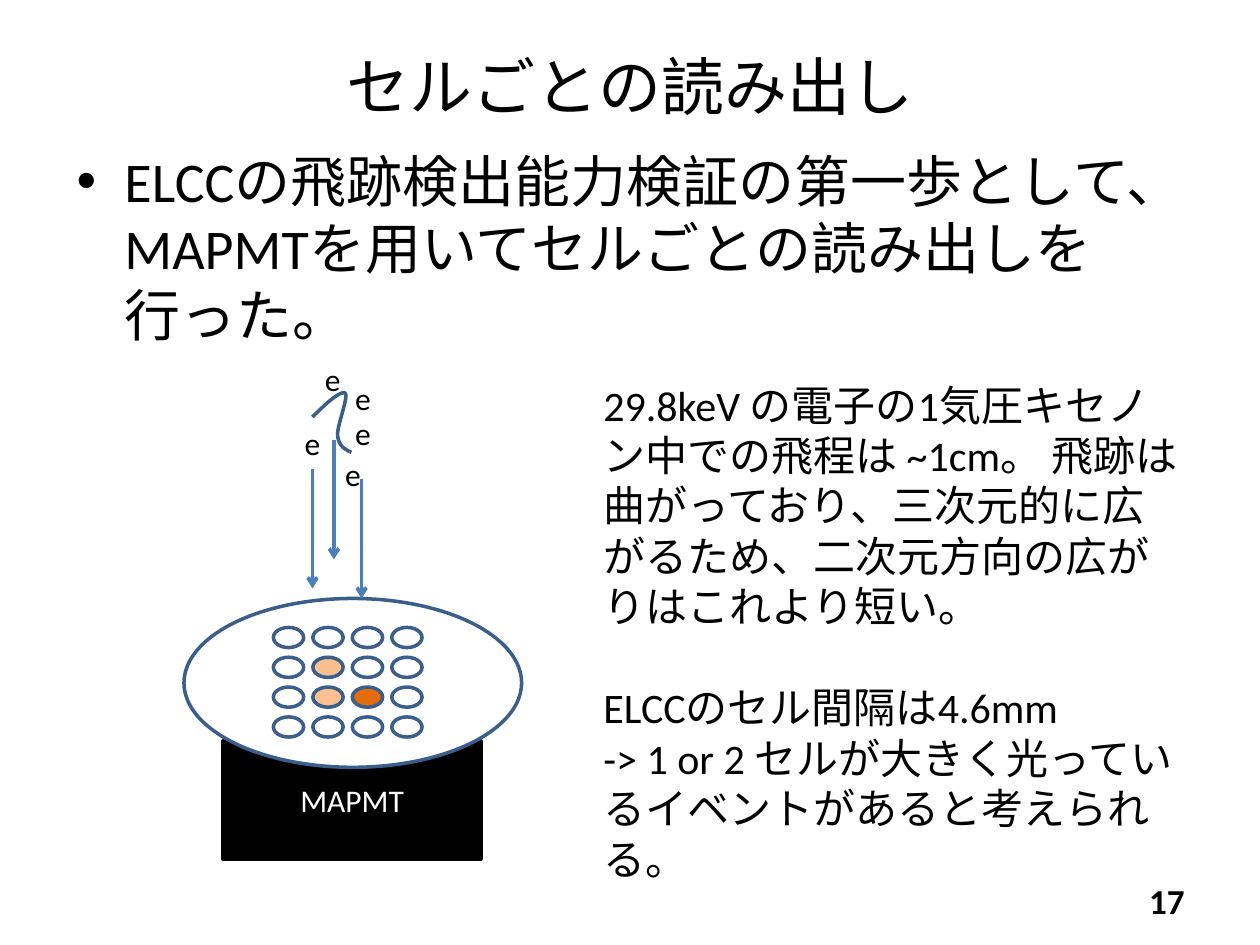
from lxml.etree import SubElement
from pptx import Presentation
from pptx.dml.color import RGBColor
from pptx.enum.shapes import MSO_CONNECTOR, MSO_SHAPE
from pptx.enum.text import MSO_ANCHOR as ANCHOR, PP_ALIGN as ALIGN
from pptx.oxml.ns import qn
from pptx.util import Inches, Pt

FONT = "Calibri"
BLACK, WHITE = "000000", "FFFFFF"
OUTLINE, ARROW = "3A5F8C", "4B7EBC"
PALE, BRIGHT = "FAC090", "E46C0A"

ELECTRONS = [(2.48, 2.81), (2.64, 3.56), (2.32, 3.32), (2.72, 2.96), (2.72, 3.24)]
DRIFTS = [(2.48, 3.72), (2.65, 3.49), (2.87, 3.80)]
DRIFT_LENGTH = 0.95
GRID = 4
CELL_LEFT, CELL_TOP = 2.17, 4.98
COLUMN_STEP, ROW_STEP = 0.94 / 3, 0.71 / 3
LIT_CELLS = {(1, 1): PALE, (2, 1): PALE, (2, 2): BRIGHT}
TRACK_START = (2.48, 3.31)
TRACK_CURVES = [
    [(2.59, 3.20), (2.70, 3.10), (2.74, 3.12)],
    [(2.77, 3.15), (2.67, 3.39), (2.68, 3.46)],
    [(2.69, 3.54), (2.74, 3.57), (2.79, 3.59)],
]
RANGE_NOTES = [
    "29.8keV の電子の1気圧キセノン中での飛程は ~1cm。 飛跡は曲がっており、"
    "三次元的に広がるため、二次元方向の広がりはこれより短い。",
    "ELCCのセル間隔は4.6mm",
    "-> 1 or 2 セルが大きく光っているイベントがあると考えられる。",
]


def rgb(value):
    return RGBColor.from_string(value)


def write(shape, lines, size, color=BLACK, align=ALIGN.LEFT, anchor=ANCHOR.TOP, bold=False):
    frame = shape.text_frame
    frame.word_wrap = True
    frame.vertical_anchor = anchor
    for index, line in enumerate(lines):
        paragraph = frame.add_paragraph() if index else frame.paragraphs[0]
        paragraph.alignment = align
        run = paragraph.add_run()
        run.text = line
        for name, value in {"name": FONT, "size": Pt(size), "bold": bold}.items():
            setattr(run.font, name, value)
        run.font.color.rgb = rgb(color)
    return frame.paragraphs


def add_text(slide, box, lines, size, **style):
    return write(slide.shapes.add_textbox(*map(Inches, box)), lines, size, **style)


def outline(shape, color):
    shape.line.color.rgb = rgb(color)
    shape.line.width = Pt(2)


def add_figure(slide, kind, box, fill=None, line=OUTLINE):
    figure = slide.shapes.add_shape(kind, *map(Inches, box))
    figure.shadow.inherit = False
    if fill:
        figure.fill.solid()
        figure.fill.fore_color.rgb = rgb(fill)
    else:
        figure.fill.background()
    outline(figure, line)
    return figure


def add_arrow_down(slide, x, top):
    arrow = slide.shapes.add_connector(
        MSO_CONNECTOR.STRAIGHT, *map(Inches, (x, top, x, top + DRIFT_LENGTH)))
    outline(arrow, ARROW)
    SubElement(arrow.line._get_or_add_ln(), qn("a:tailEnd"), type="arrow")
    SubElement(arrow._element.spPr, qn("a:effectLst"))


def curve_points(start, controls, steps=16):
    """Points along a cubic Bézier curve, without its start."""
    points = [start, *controls]
    for step in range(1, steps + 1):
        t = step / steps
        weights = ((1 - t) ** 3, 3 * t * (1 - t) ** 2, 3 * t * t * (1 - t), t ** 3)
        yield tuple(sum(w * p[axis] for w, p in zip(weights, points)) for axis in (0, 1))


def add_track(slide):
    points = [TRACK_START]
    for controls in TRACK_CURVES:
        points += list(curve_points(points[-1], controls))
    first, *rest = [(Inches(x), Inches(y)) for x, y in points]
    builder = slide.shapes.build_freeform(*first)
    builder.add_line_segments(rest, close=False)
    track = builder.convert_to_shape()
    track.shadow.inherit = False
    track.fill.background()
    outline(track, OUTLINE)


def add_detector(slide):
    mapmt = add_figure(slide, MSO_SHAPE.RECTANGLE, (1.77, 5.88, 2.05, 0.94), BLACK, BLACK)
    write(mapmt, ["MAPMT"], 18, WHITE, ALIGN.CENTER, ANCHOR.MIDDLE)
    add_figure(slide, MSO_SHAPE.OVAL, (1.46, 4.75, 2.68, 1.34), WHITE)
    for row in range(GRID):
        for column in range(GRID):
            box = (CELL_LEFT + column * COLUMN_STEP, CELL_TOP + row * ROW_STEP, 0.24, 0.16)
            add_figure(slide, MSO_SHAPE.OVAL, box, LIT_CELLS.get((row, column)))


def add_title(slide, text):
    title = slide.shapes.title
    for name, value in zip(("left", "top", "width", "height"), (0.5, 0.05, 9, 1.25)):
        setattr(title, name, Inches(value))
    write(title, [text], 36, align=ALIGN.CENTER, anchor=ANCHOR.MIDDLE)


def add_bullet(paragraph, indent):
    properties = paragraph._p.get_or_add_pPr()
    properties.set("marL", str(Inches(indent)))
    properties.set("indent", str(-Inches(indent)))
    SubElement(properties, qn("a:buFont"), typeface="Arial")
    SubElement(properties, qn("a:buChar"), char="•")


def main():
    deck = Presentation()
    deck.slide_width, deck.slide_height = Inches(10), Inches(7.5)
    slide = deck.slides.add_slide(deck.slide_layouts[5])
    add_title(slide, "セルごとの読み出し")
    summary = add_text(
        slide, (0.51, 1.11, 9, 1.75),
        ["ELCCの飛跡検出能力検証の第一歩として、MAPMTを用いてセルごとの読み出しを行った。"], 32)
    add_bullet(summary[0], 0.38)
    add_text(slide, (7.17, 6.95, 2.33, 0.4), ["17"], 20,
             align=ALIGN.RIGHT, anchor=ANCHOR.MIDDLE, bold=True)
    add_detector(slide)
    add_track(slide)
    for left, top in ELECTRONS:
        add_text(slide, (left, top, 0.59, 0.4), ["e"], 18)
    for x, top in DRIFTS:
        add_arrow_down(slide, x, top)
    notes = add_text(slide, (4.69, 2.96, 4.8, 3.74), RANGE_NOTES, 24)
    notes[1].space_before = Pt(29)
    deck.save("out.pptx")


if __name__ == "__main__":
    main()
